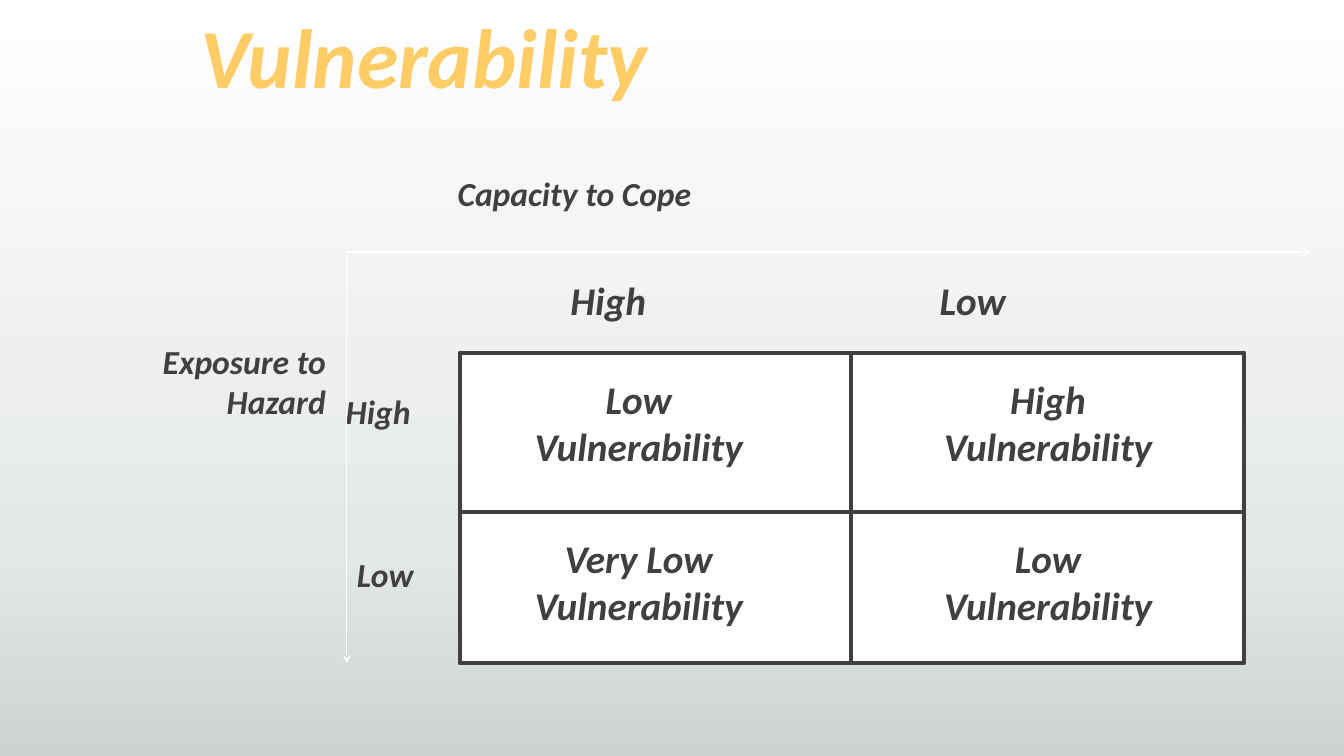
from copy import deepcopy

from lxml import etree
from pptx import Presentation
from pptx import util as u
from pptx.dml.color import RGBColor
from pptx.enum import shapes, text
from pptx.oxml.ns import qn

INK, WHITE, GOLD = "404040", "FFFFFF", "FFCC66"
LEFT, CENTER, RIGHT = text.PP_ALIGN.LEFT, text.PP_ALIGN.CENTER, text.PP_ALIGN.RIGHT


def rgb(value):
    return RGBColor.from_string(value)


class MatrixSlide:
    font = "Calibri"

    def __init__(self, prs):
        self.s = prs.slides.add_slide(prs.slide_layouts[6])

    def background(self, stops, angle):
        """Fill the background with a gradient of three (position, colour) stops."""
        fill = self.s.background.fill
        fill.gradient()
        fill.gradient_angle = angle
        stop_list = self.s.element.find(".//" + qn("a:gsLst"))
        stop_list.append(deepcopy(stop_list[0]))
        for stop, (position, color) in zip(fill.gradient_stops, stops):
            stop.position = position
            stop.color.rgb = rgb(color)

    def box(self, x, y, w, h, fill, line, weight):
        sp = self.s.shapes.add_shape(
            shapes.MSO_SHAPE.RECTANGLE, u.Inches(x), u.Inches(y), u.Inches(w), u.Inches(h))
        sp.shadow.inherit = False
        sp.fill.solid()
        sp.fill.fore_color.rgb = rgb(fill)
        sp.line.color.rgb = rgb(line)
        sp.line.width = u.Pt(weight)

    def line(self, x1, y1, x2, y2, color, weight, arrow=False):
        c = self.s.shapes.add_connector(
            shapes.MSO_CONNECTOR.STRAIGHT,
            u.Inches(x1), u.Inches(y1), u.Inches(x2), u.Inches(y2))
        c.line.color.rgb = rgb(color)
        c.line.width = u.Pt(weight)
        sp_pr = c.element.spPr
        if arrow:
            etree.SubElement(sp_pr.find(qn("a:ln")), qn("a:tailEnd"), type="stealth")
        etree.SubElement(sp_pr, qn("a:effectLst"))

    def text(self, x, y, w, h, lines, size, color=INK, align=LEFT):
        sp = self.s.shapes.add_textbox(u.Inches(x), u.Inches(y), u.Inches(w), u.Inches(h))
        tf = sp.text_frame
        tf.word_wrap = True
        tf.auto_size = text.MSO_AUTO_SIZE.SHAPE_TO_FIT_TEXT
        for i, content in enumerate(lines):
            p = tf.add_paragraph() if i else tf.paragraphs[0]
            p.alignment = align
            r = p.add_run()
            r.text = content
            r.font.name = self.font
            r.font.size = u.Pt(size)
            r.font.bold = r.font.italic = True
            r.font.color.rgb = rgb(color)


def main():
    prs = Presentation()
    prs.slide_width, prs.slide_height = u.Inches(13.33), u.Inches(7.5)
    slide = MatrixSlide(prs)
    slide.background([(0, WHITE), (0.72, "E5E8E8"), (1, "CDD2D2")], 270)

    left, top, width, height = 4.56, 3.5, 7.78, 3.08
    right, bottom = left + width, top + height
    middle_x, middle_y = 8.44, 5.08
    slide.box(left, top, width, height, WHITE, INK, 3)
    slide.line(middle_x, top, middle_x, bottom, INK, 3)
    slide.line(left, middle_y, right, middle_y, INK, 3)

    levels = [["Low", "High"], ["Very Low", "Low"]]
    for y, row in zip((3.67, 5.25), levels):
        for x, level in zip((4.5, 8.56), row):
            slide.text(x, y, 3.67, 1.03, [level, "Vulnerability"], 28, align=CENTER)

    for heading, x in (("High", 5.56), ("Low", 9.22)):
        slide.text(x, 2.69, 2.22, 0.57, [heading], 28)
    for heading, x, y in (("High", 3.33, 3.83), ("Low", 3.44, 5.45)):
        slide.text(x, y, 2.22, 0.5, [heading], 24)

    slide.text(0.89, 3.33, 2.44, 0.91, ["Exposure to Hazard"], 24, align=RIGHT)
    slide.text(4.44, 1.67, 7.39, 0.5, ["Capacity to Cope"], 24)

    axis_x, axis_y = 3.44, 2.5
    for end_x, end_y in ((13, axis_y), (axis_x, bottom)):
        slide.line(axis_x, axis_y, end_x, end_y, WHITE, 0.75, arrow=True)

    slide.text(1.89, 0, 7.33, 1.1, ["Vulnerability"], 60, GOLD)
    prs.save("out.pptx")


if __name__ == "__main__":
    main()
